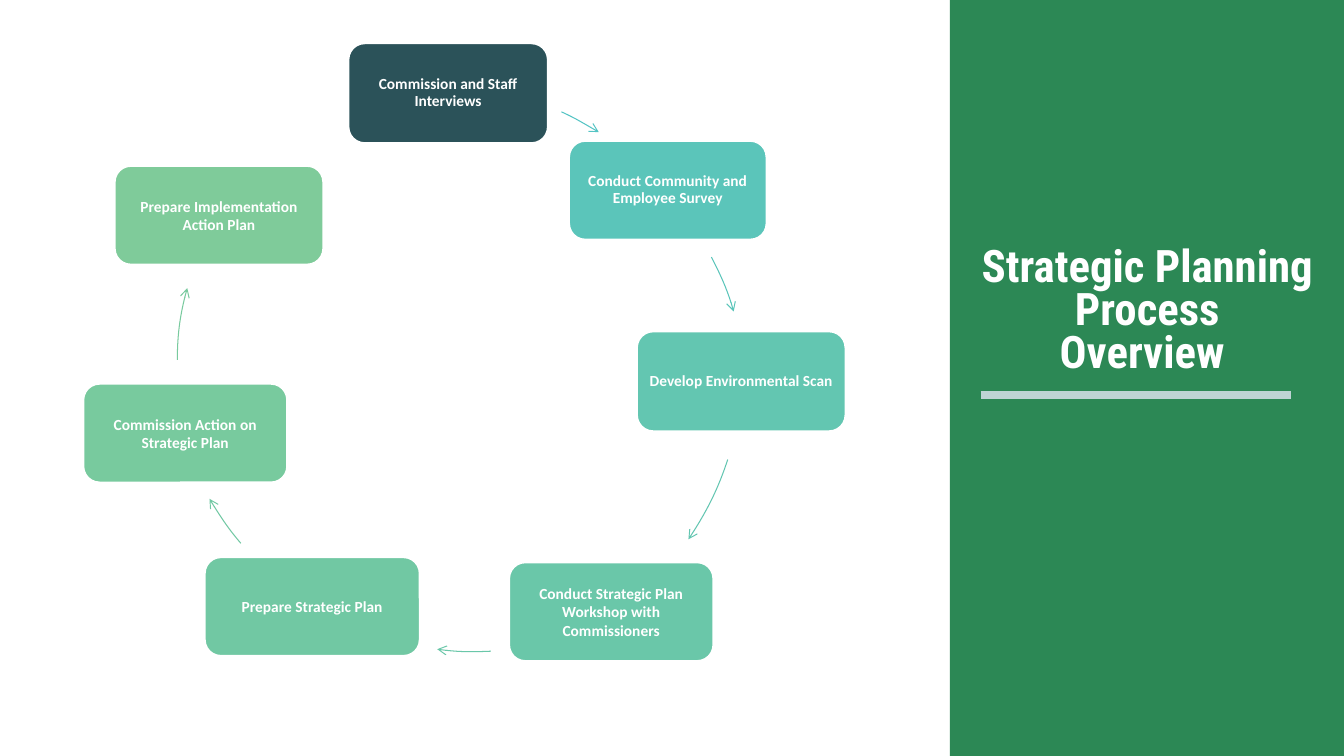
"""Builds the strategic planning process overview slide."""
import pptx
import pptx.dml.color
import pptx.enum.shapes
import pptx.enum.text
import pptx.oxml
import pptx.oxml.ns
import pptx.util
from dataclasses import dataclass

Cm = pptx.util.Cm
Pt = pptx.util.Pt
SHAPES = pptx.enum.shapes.MSO_SHAPE


@dataclass(frozen=True)
class Theme:
    panel: str = "2C8855"
    rule: str = "BED4D4"
    white: str = "FFFFFF"
    title_font: str = "Roboto Condensed"
    step_font: str = "Calibri"
    title_size: int = 32
    step_size: int = 11
    outline: float = 2
    arrow: float = 0.75
    rule_width: float = 6


THEME = Theme()
SLIDE_SIZE = (33.87, 19.05)
PANEL = (23.94, 0, 9.93, 19.05)
TITLE = ["Strategic Planning Process", "Overview "]
TITLE_BOX = (24.23, 6.12, 9.37, 3.6)
RULE = (24.71, 9.96, 32.54, 9.96)
STEP_INSET = 0.13
RING = 14.27

# text, (left, top, width, height), fill, line spacing
STEPS = [
    ("Commission and Staff Interviews", (8.77, 1.08, 5.05, 2.54), "2B5259", 0.9),
    ("Conduct Community and Employee Survey", (14.33, 3.54, 5.0, 2.51), "5BC5BA", 0.9),
    ("Develop Environmental Scan", (16.04, 8.34, 5.28, 2.54), "63C6B1", 0.9),
    ("Conduct Strategic Plan Workshop with Commissioners", (12.82, 14.16, 5.17, 2.51), "6AC7A9", 1.0),
    ("Prepare Strategic Plan", (5.15, 14.03, 5.44, 2.51), "71C8A3", 1.0),
    ("Commission Action on Strategic Plan", (2.09, 9.66, 5.16, 2.51), "78CA9E", 1.0),
    ("Prepare Implementation Action Plan", (2.88, 4.17, 5.28, 2.51), "7FCB9A", 1.0),
]
# colour, ring corner, curve from start to arrowhead
ARCS = [
    ("54C4C4", (4.09, 2.21), [(14.15, 2.82), (14.48, 2.97), (14.78, 3.15), (15.09, 3.33)]),
    ("5BC5BA", (4.47, 2.67), [(17.93, 6.48), (18.16, 6.93), (18.36, 7.37), (18.49, 7.85)]),
    ("63C6B1", (4.37, 2.36), [(18.34, 11.58), (18.11, 12.29), (17.78, 12.95), (17.35, 13.59)]),
    ("6AC7A9", (4.85, 2.16), [(12.37, 16.41), (11.91, 16.43), (11.48, 16.43), (11.02, 16.36)]),
    ("71C8A3", (4.37, 1.91), [(6.07, 13.69), (5.77, 13.34), (5.51, 12.95), (5.28, 12.57)]),
    ("78CA9E", (4.47, 1.96), [(4.47, 9.07), (4.47, 8.46), (4.55, 7.85), (4.72, 7.26)]),
]


def rgb(value):
    return pptx.dml.color.RGBColor.from_string(value)


def lengths(values):
    return [Cm(value) for value in values]


def element(tag, attributes="", content=""):
    namespace = pptx.oxml.ns.nsdecls("a")
    return pptx.oxml.parse_xml(f"<a:{tag} {namespace} {attributes}>{content}</a:{tag}>")


def add_box(page, kind, place, fill):
    box = page.shapes.add_shape(kind, *lengths(place))
    box.shadow.inherit = False
    box.fill.solid()
    box.fill.fore_color.rgb = rgb(fill)
    box.line.fill.background()
    return box


def write(frame, lines, font, size, spacing):
    frame.word_wrap = True
    frame.text = "\n".join(lines)
    for para in frame.paragraphs:
        para.alignment = pptx.enum.text.PP_ALIGN.CENTER
        para.line_spacing = spacing
        for span in para.runs:
            span.font.name = font
            span.font.size = Pt(size)
            span.font.bold = True
            span.font.color.rgb = rgb(THEME.white)


def add_step(page, text, place, fill, spacing):
    box = add_box(page, SHAPES.ROUNDED_RECTANGLE, place, fill)
    box.line.color.rgb = rgb(THEME.white)
    box.line.width = Pt(THEME.outline)
    frame = box.text_frame
    frame.margin_left = frame.margin_right = Cm(STEP_INSET)
    frame.margin_top = frame.margin_bottom = Cm(STEP_INSET)
    frame.vertical_anchor = pptx.enum.text.MSO_ANCHOR.MIDDLE
    write(frame, [text], THEME.step_font, THEME.step_size, spacing)


def add_arc(page, colour, corner, curve):
    builder = page.shapes.build_freeform(*lengths(curve[0]))
    builder.add_line_segments([lengths(curve[-1])], close=False)
    arc = builder.convert_to_shape()
    arc.left, arc.top, arc.width, arc.height = lengths((*corner, RING, RING))
    arc.shadow.inherit = False
    arc.fill.background()
    arc.line.color.rgb = rgb(colour)
    arc.line.width = Pt(THEME.arrow)

    points = [
        '<a:pt x="{}" y="{}"/>'.format(*lengths((x - corner[0], y - corner[1])))
        for x, y in curve
    ]
    properties = arc.element.spPr
    outline_path = next(properties.iter(pptx.oxml.ns.qn("a:path")))
    for child in list(outline_path):
        outline_path.remove(child)
    for side in ("w", "h"):
        outline_path.set(side, str(Cm(RING)))
    outline_path.append(element("moveTo", content=points[0]))
    outline_path.append(element("cubicBezTo", content="".join(points[1:])))
    properties.find(pptx.oxml.ns.qn("a:ln")).append(element("tailEnd", 'type="arrow"'))


def add_rule(page):
    rule = page.shapes.add_connector(
        pptx.enum.shapes.MSO_CONNECTOR.STRAIGHT, *lengths(RULE))
    rule.line.color.rgb = rgb(THEME.rule)
    rule.line.width = Pt(THEME.rule_width)
    rule.element.spPr.append(element("effectLst"))


def main():
    deck = pptx.Presentation()
    deck.slide_width, deck.slide_height = lengths(SLIDE_SIZE)
    page = deck.slides.add_slide(deck.slide_layouts[6])
    add_box(page, SHAPES.RECTANGLE, PANEL, THEME.panel)
    title = page.shapes.add_textbox(*lengths(TITLE_BOX))
    write(title.text_frame, TITLE, THEME.title_font, THEME.title_size, 0.8)
    for step in STEPS:
        add_step(page, *step)
    for arc in ARCS:
        add_arc(page, *arc)
    add_rule(page)
    deck.save("out.pptx")


if __name__ == "__main__":
    main()
